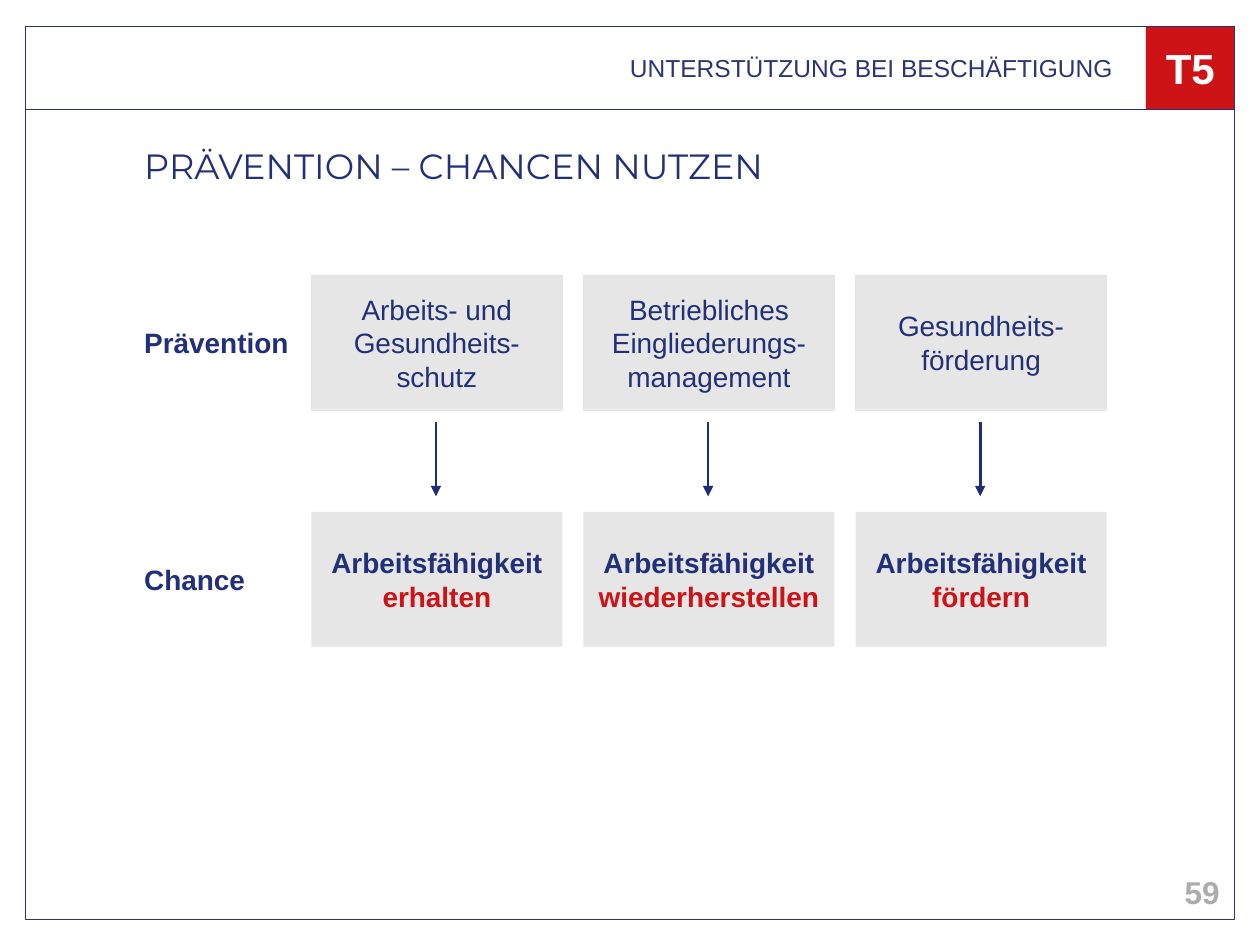
from lxml.etree import SubElement
from pptx import Presentation
from pptx.dml.color import RGBColor
from pptx.enum.shapes import MSO_CONNECTOR, MSO_SHAPE
from pptx.enum.text import MSO_ANCHOR, MSO_AUTO_SIZE, PP_ALIGN
from pptx.oxml.ns import qn
from pptx.util import Pt

COLORS = {
    "navy": "222F79",
    "frame": "2C3477",
    "arrow": "1F2C78",
    "red": "CD1316",
    "box": "E7E6E6",
    "box_line": "E2E2E3",
    "page": "ACACAC",
    "white": "FFFFFF",
}
COLUMNS = [
    ("Arbeits- und Gesundheits-schutz", "erhalten"),
    ("Betriebliches Eingliederungs- management", "wiederherstellen"),
    ("Gesundheits-\nförderung", "fördern"),
]


def color(name):
    return RGBColor.from_string(COLORS[name])


def set_text(sp, *runs, size=16, font="Arial", bold=False, align=PP_ALIGN.LEFT,
             anchor=MSO_ANCHOR.MIDDLE, insets=(0, 0, 0, 0), wrap=True,
             line_spacing=None):
    """Fill a shape with one paragraph made of (text, colour name) runs."""
    tf = sp.text_frame
    tf.auto_size = MSO_AUTO_SIZE.NONE
    tf.word_wrap = wrap
    tf.vertical_anchor = anchor
    tf.margin_left, tf.margin_top, tf.margin_right, tf.margin_bottom = map(Pt, insets)
    p = tf.paragraphs[0]
    p.alignment = align
    p.line_spacing = line_spacing
    for text, name in runs:
        for i, part in enumerate(text.split("\n")):
            if i:
                p.add_line_break()
            r = p.add_run()
            r.text = part
            r.font.size = Pt(size)
            r.font.name = font
            r.font.bold = bold
            r.font.color.rgb = color(name)


def add_label(s, box, *runs, **fmt):
    set_text(s.shapes.add_textbox(*map(Pt, box)), *runs, **fmt)


def add_rect(s, box, fill=None, line=None):
    sp = s.shapes.add_shape(MSO_SHAPE.RECTANGLE, *map(Pt, box))
    sp.shadow.inherit = False
    if fill:
        sp.fill.solid()
        sp.fill.fore_color.rgb = color(fill)
    else:
        sp.fill.background()
    if line:
        sp.line.color.rgb = color(line)
        sp.line.width = Pt(0.25)
    else:
        sp.line.fill.background()
    return sp


def add_arrow(s, x, top, bottom):
    line = s.shapes.add_connector(MSO_CONNECTOR.STRAIGHT, Pt(x), Pt(top), Pt(x), Pt(bottom))
    line.line.color.rgb = color("arrow")
    line.line.width = Pt(1.5)
    SubElement(line.line._get_or_add_ln(), qn("a:tailEnd"), type="triangle")
    SubElement(line._element.spPr, qn("a:effectLst"))


def add_frame(s, box, header_h, tag_w):
    """Page frame with the header band, chapter tag and page number."""
    x, y, w, h = box
    tag = (x + w - tag_w, y, tag_w, header_h)
    add_rect(s, tag, "red", "red")
    add_rect(s, (x, y, w, header_h), line="frame")
    add_rect(s, box, line="frame")
    add_label(s, (x, y, w - tag_w, header_h), ("UNTERSTÜTZUNG BEI BESCHÄFTIGUNG", "frame"),
              size=14, align=PP_ALIGN.RIGHT, insets=(0, 0, 18.72, 0))
    add_label(s, tag, ("T5", "white"), size=24, bold=True, align=PP_ALIGN.CENTER)
    add_label(s, (542, 495.5, 162, 28.8), ("59", "page"), size=18, bold=True,
              align=PP_ALIGN.RIGHT, insets=(7.2, 3.6, 7.2, 3.6))


def add_title(s, box):
    title = s.shapes.title
    title.left, title.top, title.width, title.height = map(Pt, box)
    set_text(title, ("PRÄVENTION – CHANCEN NUTZEN", "navy"), size=20, font="Montserrat",
             anchor=MSO_ANCHOR.TOP, line_spacing=0.9)


def add_diagram(s, box):
    """Row labels on the left, then one measure-to-chance pair per column."""
    x, y, w, h = box
    label_w, box_w, box_h = 95.5, 143.5, 77
    pitch = (w - label_w - box_w) / (len(COLUMNS) - 1)
    chance_y = y + h - box_h
    fmt = {"align": PP_ALIGN.CENTER, "insets": (7.2, 3.6, 7.2, 3.6)}

    # Row labels
    for text, top in (("Prävention", y), ("Chance", chance_y)):
        add_label(s, (x, top + (box_h - 19.4) / 2, label_w, 19.4), (text, "navy"),
                  bold=True, wrap=False)

    # Columns
    for i, (measure, effect) in enumerate(COLUMNS):
        left = x + label_w + i * pitch
        sp = add_rect(s, (left, y, box_w, box_h), "box", "box_line")
        set_text(sp, (measure, "navy"), **fmt)
        sp = add_rect(s, (left, chance_y, box_w, box_h), "box")
        set_text(sp, ("Arbeitsfähigkeit ", "navy"), (effect, "red"), bold=True, **fmt)
        add_arrow(s, left + box_w / 2 - 0.5, y + box_h + 7, chance_y - 9)


def main():
    prs = Presentation()
    prs.slide_width, prs.slide_height = Pt(720), Pt(540)
    s = prs.slides.add_slide(prs.slide_layouts[5])
    add_frame(s, (14.4, 15.1, 691.2, 510.1), header_h=47.5, tag_w=50.8)
    add_title(s, (82.4, 85, 549.6, 47.5))
    add_diagram(s, (82.4, 157.2, 550, 212.4))
    prs.save("out.pptx")


if __name__ == "__main__":
    main()
